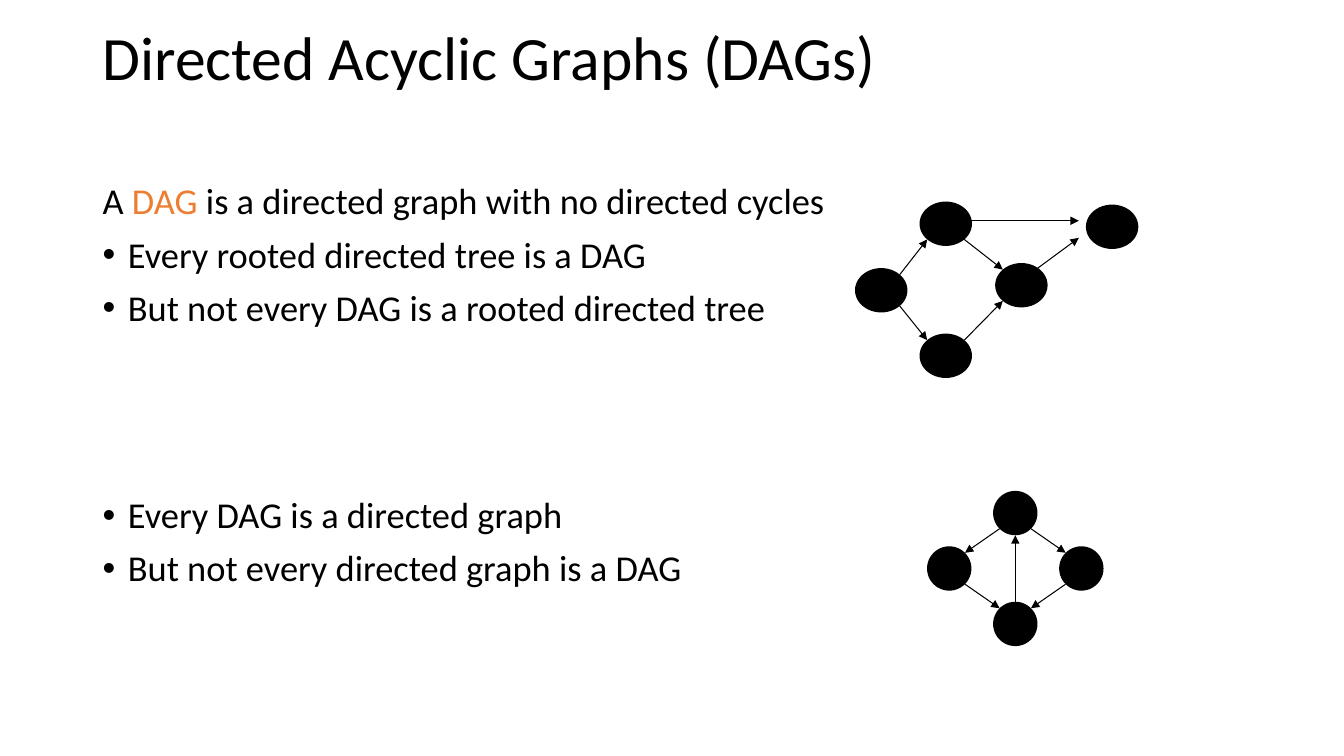
from dataclasses import dataclass
from math import sqrt

from lxml import etree
from pptx import Presentation
from pptx.dml.color import RGBColor
from pptx.enum.shapes import MSO_CONNECTOR, MSO_SHAPE
from pptx.enum.text import MSO_ANCHOR
from pptx.oxml.ns import qn
from pptx.util import Inches, Pt

LINE = MSO_CONNECTOR.STRAIGHT
OVAL = MSO_SHAPE.OVAL
MID = MSO_ANCHOR.MIDDLE
TOP = MSO_ANCHOR.TOP
COLS, ROWS = 133.3, 75


@dataclass(frozen=True)
class Theme:
    ink: RGBColor = RGBColor(0, 0, 0)
    mark: RGBColor = RGBColor(0xED, 0x7D, 0x31)
    face: str = "Calibri"
    head: int = 44
    body: int = 26
    rule: float = 0.75
    lead: float = 0.9
    dent: float = 0.25


class Deck:
    """Draws styled elements on one slide, placed by columns and rows of a grid."""

    def __init__(self, theme):
        self.theme = theme
        self.prs = Presentation()
        self.prs.slide_width, self.prs.slide_height = Inches(13.33), Inches(7.5)
        self.slide = self.prs.slides.add_slide(self.prs.slide_layouts[6])

    def x(self, cols):
        return round(self.prs.slide_width * cols / COLS)

    def y(self, rows):
        return round(self.prs.slide_height * rows / ROWS)

    def place(self, left, top, wide, high):
        return self.x(left), self.y(top), self.x(wide), self.y(high)

    def text(self, area, paras, size, anchor=TOP):
        frame = self.slide.shapes.add_textbox(*self.place(*area)).text_frame
        for key, val in {"word_wrap": True, "vertical_anchor": anchor}.items():
            setattr(frame, key, val)
        for i, (runs, gap, dot) in enumerate(paras):
            para = frame.add_paragraph() if i else frame.paragraphs[0]
            if dot:
                self.bullet(para)
            form = {"line_spacing": self.theme.lead, "space_before": Pt(gap)}
            for key, val in form.items():
                setattr(para, key, val)
            for words, color in runs:
                run = para.add_run()
                run.text = words
                form = {"name": self.theme.face, "size": Pt(size)}
                for key, val in form.items():
                    setattr(run.font, key, val)
                run.font.color.rgb = color

    def bullet(self, para):
        props = para._p.get_or_add_pPr()
        dent = Inches(self.theme.dent)
        for key, val in {"marL": dent, "indent": -dent}.items():
            props.set(key, str(val))
        etree.SubElement(props, qn("a:buFont"), typeface="Arial")
        etree.SubElement(props, qn("a:buChar"), char="•")

    def node(self, spot, size):
        (col, row), (wide, high) = spot, size
        area = self.place(col - wide / 2, row - high / 2, wide, high)
        oval = self.slide.shapes.add_shape(OVAL, *area)
        oval.shadow.inherit = False
        oval.fill.solid()
        oval.fill.fore_color.rgb = self.theme.ink
        oval.line.fill.background()

    def arrow(self, start, end):
        ends = self.x(start[0]), self.y(start[1]), self.x(end[0]), self.y(end[1])
        link = self.slide.shapes.add_connector(LINE, *ends)
        etree.SubElement(link._element.spPr, qn("a:effectLst"))
        link.line.width = Pt(self.theme.rule)
        link.line.color.rgb = self.theme.ink
        etree.SubElement(link.line._get_or_add_ln(), qn("a:tailEnd"), type="triangle")

    def graph(self, nodes, size, edges):
        for spot in nodes.values():
            self.node(spot, size)
        for tail, tip in edges:
            start, end = nodes[tail], nodes[tip]
            self.arrow(rim(start, end, size), rim(end, start, size))


def sign(num):
    return (num > 0) - (num < 0)


def rim(spot, goal, size):
    ways = [sign(b - a) for a, b in zip(spot, goal)]
    norm = sqrt(sum(map(abs, ways)))
    return [a + way * span / 2 / norm for a, way, span in zip(spot, ways, size)]


def main():
    theme = Theme()
    deck = Deck(theme)
    ink = theme.ink
    deck.text((9.2, 1, 115, 10), [([("Directed Acyclic Graphs (DAGs)", ink)], 0, False)],
              theme.head, MID)
    intro = [("A ", ink), ("DAG", theme.mark),
             (" is a directed graph with no directed cycles", ink)]
    points = [
        ("Every rooted directed tree is a DAG", 10),
        ("But not every DAG is a rooted directed tree", 10),
        ("Every DAG is a directed graph", 120),
        ("But not every directed graph is a DAG", 10),
    ]
    paras = [(intro, 0, False)] + [([(words, ink)], gap, True) for words, gap in points]
    deck.text((9.2, 17.7, 115, 47.6), paras, theme.body)

    dag = {"left": (87.4, 28.8), "mid": (101.3, 28.3), "top": (93.8, 22.2),
           "low": (93.8, 35.3), "far": (110.3, 22.5)}
    deck.graph(dag, (5.2, 4.4), [("left", "low"), ("left", "top"),
                                 ("top", "mid"), ("low", "mid")])
    deck.arrow((96.2, 21.9), (107, 21.9))
    deck.arrow((102.8, 26.7), (107, 23.6))

    col, row, dx, dy = 100.7, 56.4, 6.55, 5.5
    loop = {"top": (col, row - dy), "low": (col, row + dy),
            "right": (col + dx, row), "left": (col - dx, row)}
    deck.graph(loop, (4.4, 4.4), [("top", "left"), ("top", "right"), ("right", "low"),
                                  ("left", "low"), ("low", "top")])
    deck.prs.save("out.pptx")


if __name__ == "__main__":
    main()
